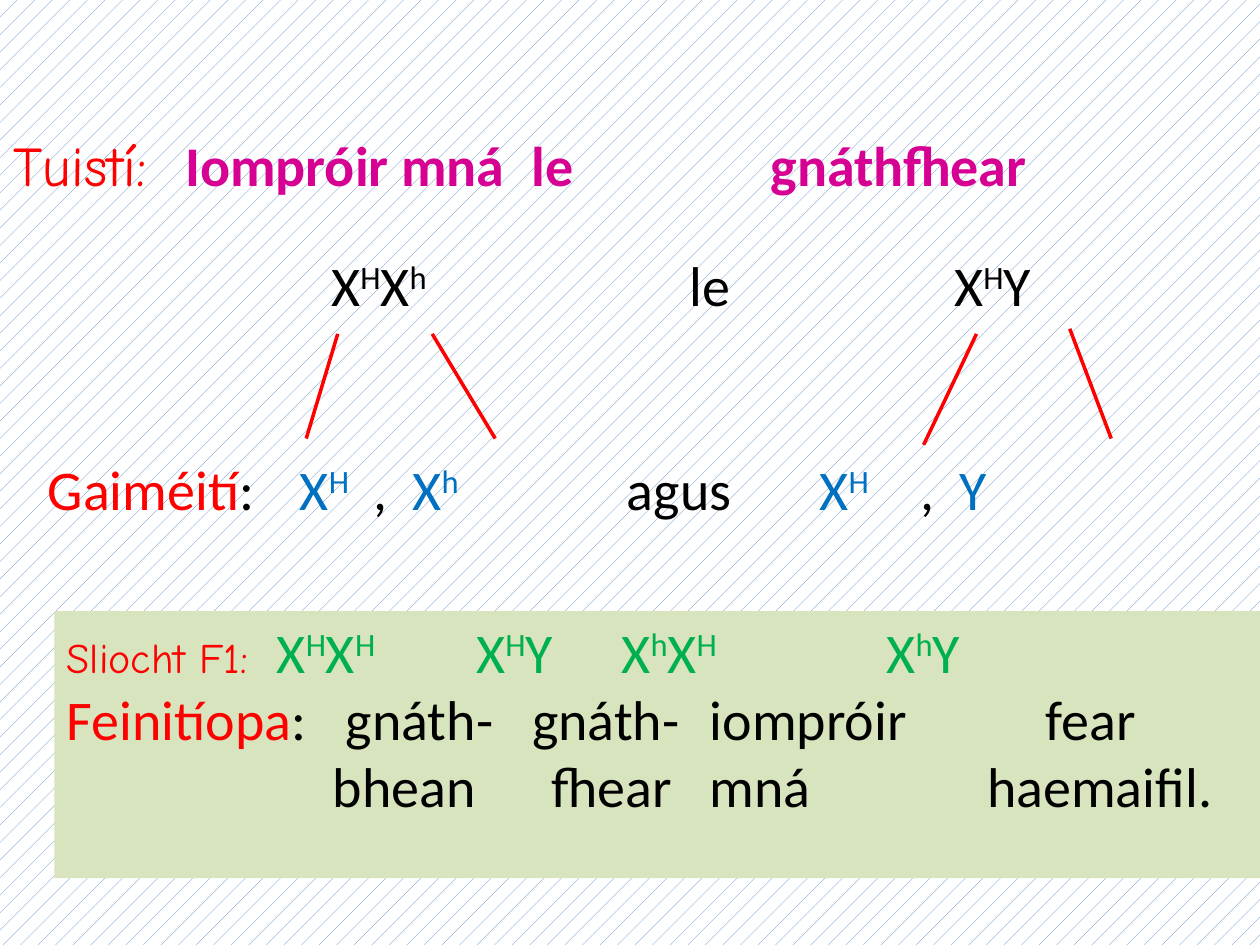
from pptx import Presentation
from pptx.dml.color import RGBColor
from pptx.enum.dml import MSO_PATTERN
from pptx.enum.shapes import MSO_CONNECTOR, MSO_SHAPE
from pptx.enum.text import MSO_ANCHOR, PP_ALIGN
from pptx.oxml.ns import qn
from pptx.util import Pt
from lxml.etree import SubElement

RED, BLACK, MAGENTA = "FF0000", "000000", "D60093"
BLUE, GREEN, PALE_GREEN = "0070C0", "00B050", "D7E4BD"


def color(hex_string):
    return RGBColor.from_string(hex_string)


class CrossSlide:
    body_font, label_font, size = "Calibri", "Comic Neue", 32

    def __init__(self, presentation):
        self.slide = presentation.slides.add_slide(presentation.slide_layouts[6])

    def background(self, fore, back):
        fill = self.slide.background.fill
        fill.patterned()
        fill.pattern = MSO_PATTERN.PERCENT_5
        fill.fore_color.rgb, fill.back_color.rgb = color(fore), color(back)

    def line(self, x1, y1, x2, y2):
        line = self.slide.shapes.add_connector(
            MSO_CONNECTOR.STRAIGHT, Pt(x1), Pt(y1), Pt(x2), Pt(y2))
        line.line.color.rgb, line.line.width = color(RED), Pt(2)
        SubElement(line._element.spPr, qn("a:effectLst"))

    def text_box(self, left, top, width, height, rows):
        box = self.slide.shapes.add_textbox(Pt(left), Pt(top), Pt(width), Pt(height))
        self.add_rows(box.text_frame, rows)

    def panel(self, left, top, width, height, fill, rows):
        panel = self.slide.shapes.add_shape(
            MSO_SHAPE.RECTANGLE, Pt(left), Pt(top), Pt(width), Pt(height))
        panel.shadow.inherit = False
        panel.fill.solid()
        panel.fill.fore_color.rgb = color(fill)
        panel.line.fill.background()
        self.add_rows(panel.text_frame, rows)

    def add_rows(self, frame, rows):
        """Each row is (space before, pieces); see add_piece for a piece."""
        frame.word_wrap, frame.vertical_anchor = True, MSO_ANCHOR.TOP
        for index, (space, pieces) in enumerate(rows):
            paragraph = frame.add_paragraph() if index else frame.paragraphs[0]
            paragraph.alignment, paragraph.space_before = PP_ALIGN.LEFT, Pt(space)
            tabs = SubElement(paragraph._p.get_or_add_pPr(), qn("a:tabLst"))
            for piece in pieces:
                self.add_piece(paragraph, tabs, *piece)

    def add_piece(self, paragraph, tabs, stop, text, hue, font=None, size=None, bold=False):
        """Put text at a tab stop (0 for none); ^ switches superscript on and off."""
        if stop:
            SubElement(tabs, qn("a:tab"), pos=str(Pt(stop)), algn="l")
            text = "\t" + text
        for index, part in enumerate(text.split("^")):
            if not part:
                continue
            run = paragraph.add_run()
            run.text = part
            run.font.name, run.font.size = font or self.body_font, Pt(size or self.size)
            run.font.bold, run.font.color.rgb = bold, color(hue)
            if index % 2:
                run._r.get_or_add_rPr().set("baseline", "30000")


def main():
    presentation = Presentation()
    presentation.slide_width, presentation.slide_height = Pt(720), Pt(540)
    cross = CrossSlide(presentation)
    cross.background("4F81BD", "FFFFFF")

    # Parents
    parents = [(98, "Iompróir mná"), (296, "le"), (432.5, "gnáthfhear")]
    cross.text_box(0.7, 71.3, 708, 253, [
        (0, [(0, "Tuistí:", RED, cross.label_font)]
         + [(stop, text, MAGENTA, None, None, True) for stop, text in parents])])

    # Branches from each parent to its gametes
    for branch in [(193, 190.8, 175, 250.6), (247, 190.8, 283, 250.6),
                   (558, 190.8, 527.8, 254.2), (611.3, 187.9, 635, 250.6)]:
        cross.line(*branch)

    # Parent genotypes and gametes
    cross.text_box(20.2, 139.7, 687, 201, [
        (0, [(162, "X^H^X^h", BLACK), (367, "le", BLACK), (518, "X^H^Y", BLACK)]),
        (78, [(0, "Gaiméití", RED), (0, ":", BLACK),
              (144, "X^H", BLUE), (186, ",", BLACK), (208.5, "X^h", BLUE),
              (331, "agus", BLACK),
              (441, "X^H", BLUE), (499, ",", BLACK), (521, "Y", BLUE)])])

    # Offspring genotypes and phenotypes
    genotypes = [(120, "X^H^X^H"), (234, "X^H^Y"), (317, "X^h^X^H"), (468.5, "X^h^Y")]
    phenotypes = [(159.5, "gnáth-"), (266, "gnáth-"), (367.5, "iompróir"), (559.5, "fear")]
    endings = [(152, "bhean"), (277, "fhear"), (367.5, "mná"), (526, "haemaifil.")]
    cross.panel(31, 349.2, 697.7, 152.6, PALE_GREEN, [
        (0, [(0, "Sliocht F1:", RED, cross.label_font, 24)]
         + [(*piece, GREEN) for piece in genotypes]),
        (0, [(0, "Feinitíopa", RED), (0, ":", BLACK)]
         + [(*piece, BLACK) for piece in phenotypes]),
        (0, [(*piece, BLACK) for piece in endings])])

    presentation.save("out.pptx")


if __name__ == "__main__":
    main()
